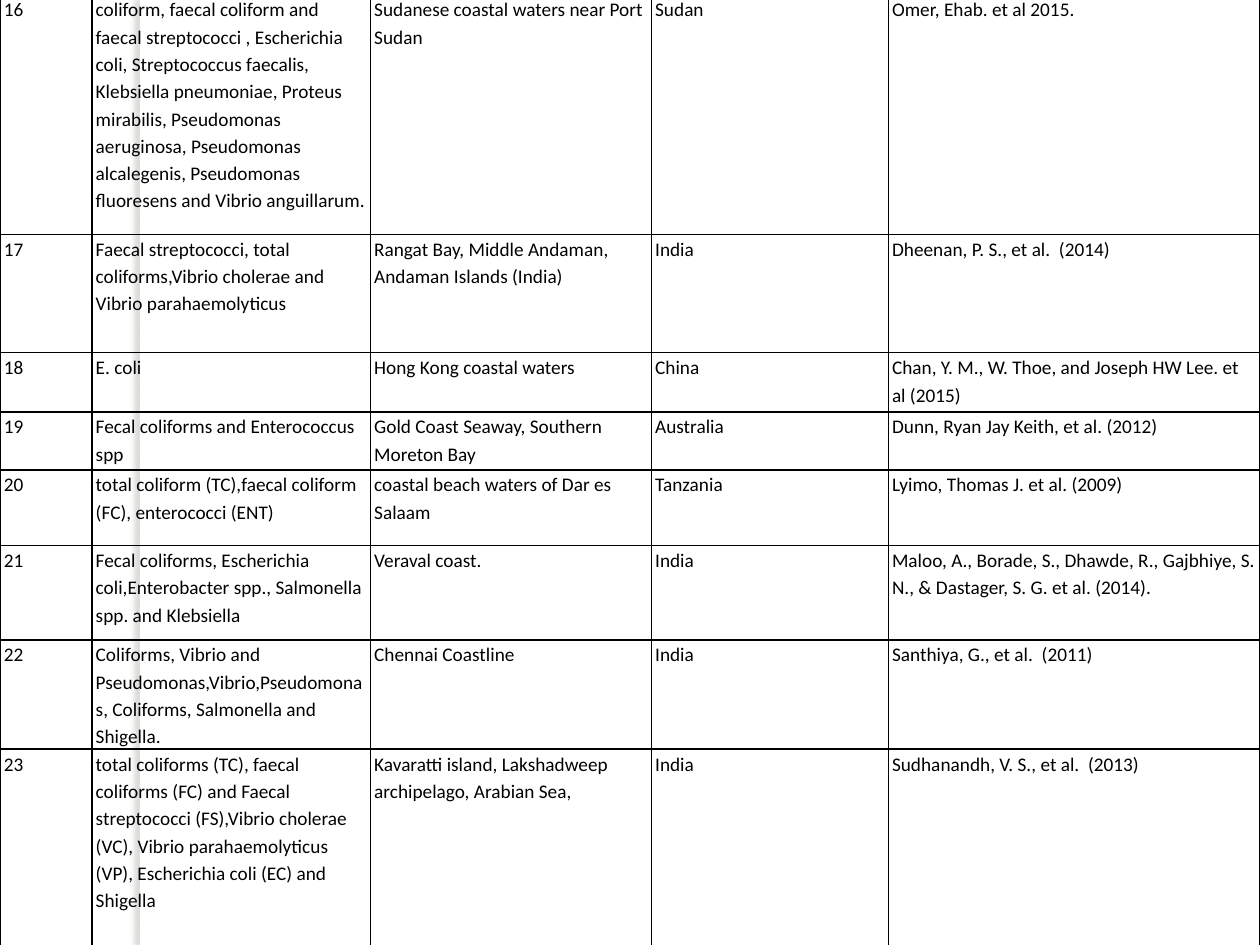
from dataclasses import dataclass

from lxml.etree import SubElement
from pptx import Presentation
from pptx.dml.color import RGBColor
from pptx.enum.shapes import MSO_SHAPE
from pptx.oxml.ns import qn
from pptx.util import Inches, Pt


@dataclass
class Study:
    num: str
    germs: str
    place: str
    land: str
    cite: str
    height: float


COLS = [0.73, 2.21, 2.23, 1.88, 2.95]
STUDIES = [
    Study("16", "coliform, faecal coliform and faecal streptococci , Escherichia coli, "
          "Streptococcus faecalis, Klebsiella pneumoniae, Proteus mirabilis, "
          "Pseudomonas aeruginosa, Pseudomonas alcalegenis, Pseudomonas fluoresens "
          "and Vibrio anguillarum.",
          "Sudanese coastal waters near Port Sudan", "Sudan", "Omer, Ehab. et al 2015.", 1.9),
    Study("17", "Faecal streptococci, total coliforms,Vibrio cholerae and Vibrio "
          "parahaemolyticus",
          "Rangat Bay, Middle Andaman, Andaman Islands (India)", "India",
          "Dheenan, P. S., et al.  (2014)", 0.94),
    Study("18", "E. coli", "Hong Kong coastal waters", "China",
          "Chan, Y. M., W. Thoe, and Joseph HW Lee. et al (2015)", 0.47),
    Study("19", "Fecal coliforms and Enterococcus spp",
          "Gold Coast Seaway, Southern Moreton Bay", "Australia",
          "Dunn, Ryan Jay Keith, et al. (2012)", 0.46),
    Study("20", "total coliform (TC),faecal coliform (FC), enterococci (ENT)",
          "coastal beach waters of Dar es Salaam", "Tanzania",
          "Lyimo, Thomas J. et al. (2009)", 0.6),
    Study("21", "Fecal coliforms, Escherichia coli,Enterobacter spp., Salmonella spp. "
          "and Klebsiella",
          "Veraval coast.", "India",
          "Maloo, A., Borade, S., Dhawde, R., Gajbhiye, S. N., & Dastager, S. G. "
          "et al. (2014).", 0.75),
    Study("22", "Coliforms, Vibrio and Pseudomonas,Vibrio,Pseudomonas, Coliforms, "
          "Salmonella and Shigella.",
          "Chennai Coastline", "India", "Santhiya, G., et al.  (2011)", 0.75),
    Study("23", "total coliforms (TC), faecal coliforms (FC) and Faecal streptococci "
          "(FS),Vibrio cholerae (VC), Vibrio parahaemolyticus (VP), Escherichia coli "
          "(EC) and Shigella",
          "Kavaratti island, Lakshadweep archipelago, Arabian Sea,", "India",
          "Sudhanandh, V. S., et al.  (2013)", 1.66),
]


def color(code: str) -> RGBColor:
    return RGBColor.from_string(code)


FONT = {"name": "Calibri", "size": Pt(11), "bold": False}
INSET = {"margin_left": Inches(0.03), "margin_right": Inches(0.03),
         "margin_top": 0, "margin_bottom": 0}
PLAIN = ("first_row", "horz_banding")


def apply(item, values: dict) -> None:
    for key, value in values.items():
        setattr(item, key, value)


def add_tint(node, code: str):
    fill = SubElement(node, qn("a:srgbClr"))
    fill.set("val", code)
    return fill


def draw_strip(slide) -> None:
    strip = slide.shapes.add_shape(
        MSO_SHAPE.RECTANGLE, Inches(1.11), 0, Inches(0.08), Inches(7.5))
    strip.shadow.inherit = False
    strip.fill.solid()
    strip.fill.fore_color.rgb = color("FFFFFF")
    strip.line.fill.background()
    # Soft shadow to the left
    effects = strip.element.spPr.find(qn("a:effectLst"))
    shade = SubElement(effects, qn("a:outerShdw"), blurRad=str(Pt(3)),
                       dist=str(Pt(3)), dir="10800000", algn="tl", rotWithShape="0")
    SubElement(add_tint(shade, "736F63"), qn("a:alpha"), val="25000")


def add_edges(cell) -> None:
    props = cell._tc.get_or_add_tcPr()
    for spot, side in enumerate(("lnL", "lnR", "lnT", "lnB")):
        edge = SubElement(props, qn(f"a:{side}"), w=str(Pt(1)))
        add_tint(SubElement(edge, qn("a:solidFill")), "000000")
        props.insert(spot, edge)


def fill_cell(cell, text: str) -> None:
    apply(cell, INSET)
    cell.fill.background()
    add_edges(cell)
    para = cell.text_frame.paragraphs[0]
    para.line_spacing = 1.15
    run = para.add_run()
    run.text = text
    apply(run.font, FONT)
    run.font.color.rgb = color("000000")


def draw_table(slide, studies: list[Study]) -> None:
    height = sum(study.height for study in studies)
    table = slide.shapes.add_table(
        len(studies), len(COLS), 0, Inches(-0.04), Inches(10), Inches(height)).table
    apply(table, dict.fromkeys(PLAIN, False))
    for col, width in zip(table.columns, COLS):
        col.width = Inches(width)
    for row, study in zip(table.rows, studies):
        row.height = Inches(study.height)
        texts = (study.num, study.germs, study.place, study.land, study.cite)
        for cell, text in zip(row.cells, texts):
            fill_cell(cell, text)


def main() -> None:
    deck = Presentation()
    apply(deck, {"slide_width": Inches(10), "slide_height": Inches(7.5)})
    slide = deck.slides.add_slide(deck.slide_layouts[6])
    # Side strip behind the table
    draw_strip(slide)
    # Studies by number
    draw_table(slide, STUDIES)
    deck.save("out.pptx")


if __name__ == "__main__":
    main()
